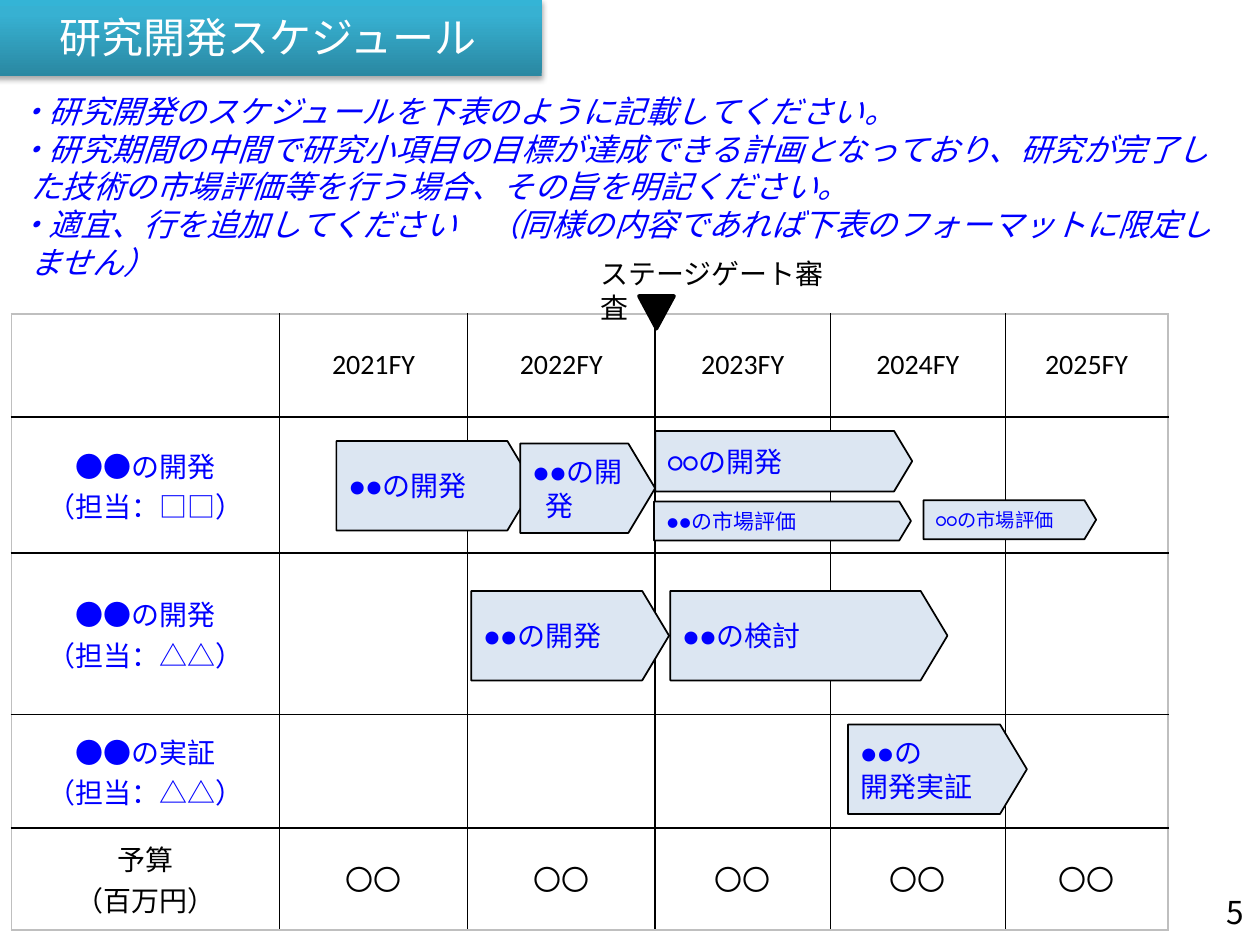
from copy import deepcopy

from lxml import etree
from pptx import Presentation
from pptx.dml.color import RGBColor
from pptx.enum import shapes, text
from pptx.oxml import parse_xml
from pptx.oxml.ns import qn
from pptx.util import Inches, Pt

NS = 'xmlns:a="http://schemas.openxmlformats.org/drawingml/2006/main"'
BLUE, BLACK, GRAY = "0000FF", "000000", "BFBFBF"
CJK = "Noto Sans CJK JP"
LEFT, CENTER, RIGHT = text.PP_ALIGN.LEFT, text.PP_ALIGN.CENTER, text.PP_ALIGN.RIGHT
MIDDLE = text.MSO_ANCHOR.MIDDLE
rgb = RGBColor.from_string


def write(tf, lines, size, color, font="Calibri", align=LEFT, hang=0, italic=None):
    for i, line in enumerate(lines):
        p = tf.paragraphs[0] if i == 0 else tf.add_paragraph()
        p.alignment = align
        if hang:
            pPr = p._p.get_or_add_pPr()
            pPr.set("marL", str(Inches(hang)))
            pPr.set("indent", str(-Inches(hang)))
        r = p.add_run()
        r.text = line
        r.font.size = Pt(size)
        r.font.name = font
        r.font.italic = italic
        r.font.color.rgb = rgb(color)
        etree.SubElement(r._r.rPr, qn("a:ea")).set("typeface", font)


prs = Presentation()
prs.slide_width, prs.slide_height = Inches(10), Inches(7.5)
s = prs.slides.add_slide(prs.slide_layouts[5])

# Title banner with gradient and soft shadow
sp = s.shapes.title
sp.left, sp.top, sp.width, sp.height = Inches(-0.04), Inches(-0.01), Inches(4.34), Inches(0.61)
sp.fill.gradient()
sp.fill.gradient_angle = 90
gs_list = sp.fill._fill._gradFill.gsLst
gs_list.append(deepcopy(gs_list[0]))
for stop, (pos, color) in zip(sp.fill.gradient_stops,
                              [(0, "2A88A2"), (0.8, "37B1D2"), (1, "34B4D6")]):
    stop.position = pos
    stop.color.rgb = rgb(color)
sp._element.spPr.append(parse_xml(
    f'<a:effectLst {NS}><a:outerShdw blurRad="{Pt(3.1)}" dist="{Pt(1.8)}" dir="5400000" '
    'rotWithShape="0"><a:srgbClr val="000000"><a:alpha val="35000"/></a:srgbClr>'
    '</a:outerShdw></a:effectLst>'))
sp.text_frame.vertical_anchor = MIDDLE
write(sp.text_frame, ["研究開発スケジュール"], 24, "FFFFFF", align=CENTER)

# Schedule table
rows = [
    [[]] + [[f"{year}FY"] for year in range(2021, 2026)],
    [["●●の開発", "（担当：□□）"]] + [[]] * 5,
    [["●●の開発", "（担当：△△）"]] + [[]] * 5,
    [["●●の実証", "（担当：△△）"]] + [[]] * 5,
    [["予算", "（百万円）"]] + [["〇〇"]] * 5,
]
col_widths = [2.13, 1.49, 1.49, 1.39, 1.39, 1.29]
row_heights = [0.82, 1.08, 1.28, 0.9, 0.81]
n_rows, n_cols = len(rows), len(col_widths)
tbl = s.shapes.add_table(n_rows, n_cols, Inches(0.09), Inches(2.49),
                         Inches(9.2), Inches(4.88)).table
tbl.first_row = tbl.horz_banding = False
for col, width in zip(tbl.columns, col_widths):
    col.width = Inches(width)
for row, height in zip(tbl.rows, row_heights):
    row.height = Inches(height)
for i, row in enumerate(rows):
    for j, lines in enumerate(row):
        cell = tbl.cell(i, j)
        cell.fill.background()
        cell.vertical_anchor = MIDDLE
        cell.margin_left = cell.margin_right = cell.margin_top = cell.margin_bottom = 0
        outer = {"lnL": j == 0, "lnR": j == n_cols - 1, "lnT": i == 0, "lnB": i == n_rows - 1}
        for k, (side, edge) in enumerate(outer.items()):
            cell._tc.tcPr.insert(k, parse_xml(
                f'<a:{side} {NS} w="{Pt(1)}"><a:solidFill><a:srgbClr '
                f'val="{GRAY if edge else BLACK}"/></a:solidFill></a:{side}>'))
        write(cell.text_frame, lines, 16, BLUE if j == 0 and i < n_rows - 1 else BLACK,
              font="Calibri" if i == 0 else CJK, align=CENTER)

# Task arrows: left, top, width, height, size, lines
tasks = [
    (5.19, 3.98, 2.04, 0.31, 12, ["●●の市場評価"]),
    (5.32, 4.69, 2.2, 0.71, 16, ["●●の検討"]),
    (2.67, 3.5, 1.57, 0.71, 16, ["●●の開発"]),
    (3.74, 4.69, 1.57, 0.71, 16, ["●●の開発"]),
    (6.73, 5.75, 1.42, 0.71, 16, ["●●の", "開発実証"]),
    (5.2, 3.42, 2.04, 0.48, 16, ["○○の開発"]),
    (7.33, 3.97, 1.37, 0.31, 11, ["○○の市場評価"]),
    (4.13, 3.52, 1.07, 0.71, 16, ["●●の開発"]),
]
for left, top, width, height, size, lines in tasks:
    sp = s.shapes.add_shape(shapes.MSO_SHAPE.PENTAGON, Inches(left), Inches(top),
                            Inches(width), Inches(height))
    sp.adjustments[0] = 0.3
    sp.shadow.inherit = False
    sp.fill.solid()
    sp.fill.fore_color.rgb = rgb("DCE6F2")
    sp.line.color.rgb = rgb(BLACK)
    sp.line.width = Pt(1)
    sp.text_frame.vertical_anchor = MIDDLE
    write(sp.text_frame, lines, size, BLUE, hang=0.1)

# Stage gate marker
sp = s.shapes.add_shape(shapes.MSO_SHAPE.ISOSCELES_TRIANGLE, Inches(5.07), Inches(2.35),
                        Inches(0.28), Inches(0.26))
sp._element.spPr.xfrm.set("flipV", "1")
sp.shadow.inherit = False
sp.fill.solid()
sp.fill.fore_color.rgb = rgb(BLACK)
sp.line.color.rgb = rgb(BLACK)
sp.line.width = Pt(2)
tf = s.shapes.add_textbox(Inches(4.67), Inches(1.99), Inches(2.05), Inches(0.37)).text_frame
tf.word_wrap = True
write(tf, ["ステージゲート審査"], 16, BLACK)

# Instructions
tf = s.shapes.add_textbox(Inches(0.04), Inches(0.68), Inches(9.83), Inches(1.31)).text_frame
tf.word_wrap = True
write(tf, [
    "・研究開発のスケジュールを下表のように記載してください。",
    "・研究期間の中間で研究小項目の目標が達成できる計画となっており、研究が完了した"
    "技術の市場評価等を行う場合、その旨を明記ください。",
    "・適宜、行を追加してください　（同様の内容であれば下表のフォーマットに限定しません）",
], 18, BLUE, hang=0.1, italic=True)

# Page number
tf = s.shapes.add_textbox(Inches(9.29), Inches(7.11), Inches(0.58), Inches(0.25)).text_frame
tf.margin_left = tf.margin_right = tf.margin_top = tf.margin_bottom = 0
tf.vertical_anchor = MIDDLE
tf.word_wrap = True
write(tf, ["5"], 18, BLACK, font=CJK, align=RIGHT)

prs.save("out.pptx")
